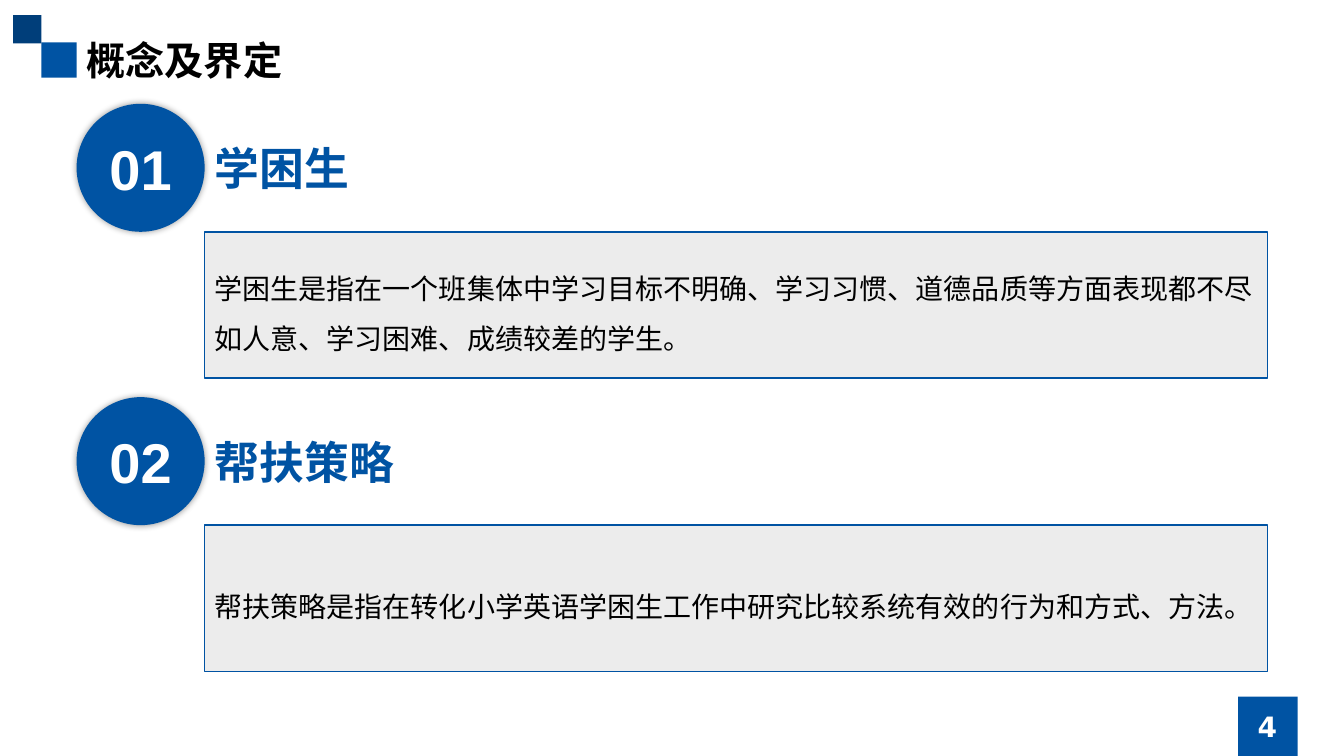
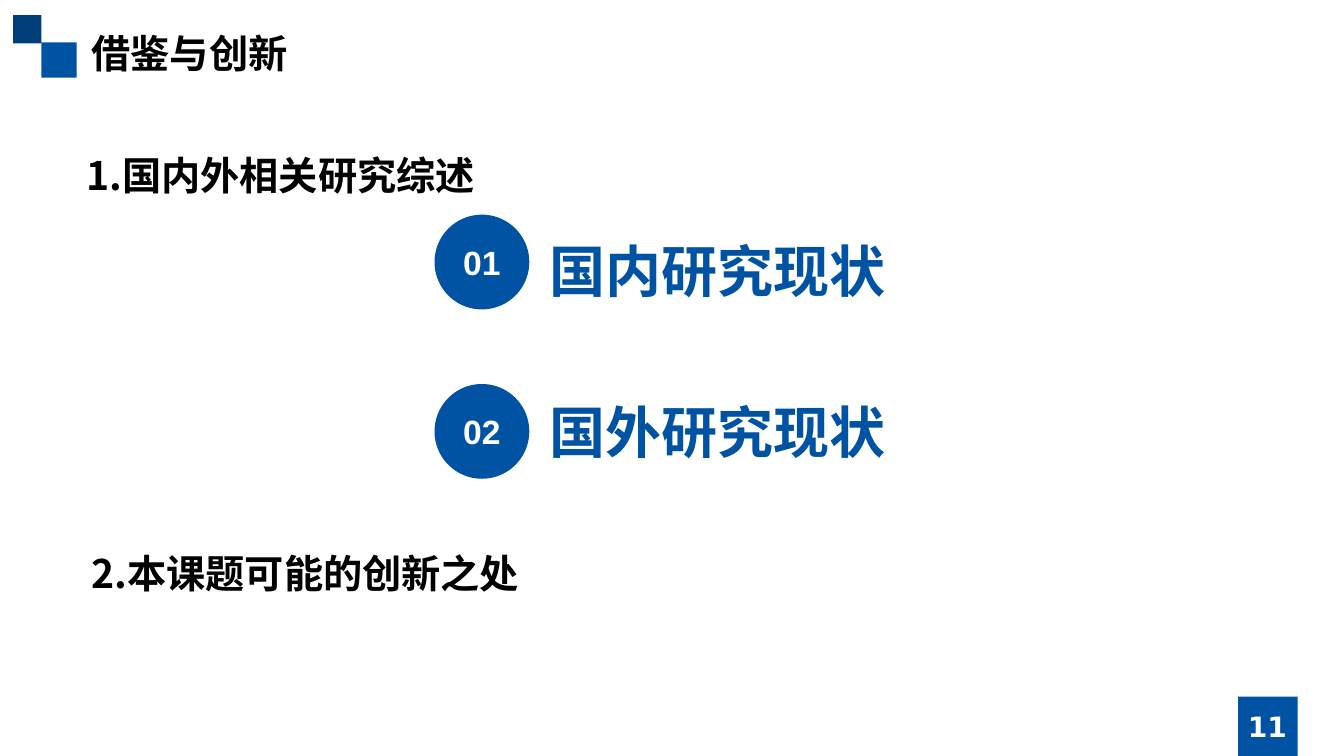
from lxml import etree
from pptx import Presentation
from pptx.dml.color import RGBColor
from pptx.enum.shapes import MSO_SHAPE as Shape
from pptx.enum.text import MSO_ANCHOR as Anchor, MSO_AUTO_SIZE as AutoSize, PP_ALIGN as Align
from pptx.oxml.ns import qn
from pptx.util import Inches, Pt

BLUE = RGBColor(0x00, 0x53, 0xA3)
NAVY = RGBColor(0x00, 0x3E, 0x7A)
PALE = RGBColor(0xEC, 0xEC, 0xEC)
BLACK = RGBColor(0x00, 0x00, 0x00)
WHITE = RGBColor(0xFF, 0xFF, 0xFF)

HEADING_FONT = "Noto Sans CJK SC"
BODY_FONT = "DejaVu Sans"
NUMBER_FONT = "Arial"


class Deck:
    """Shared style and the slide being built."""

    def __init__(self):
        self.prs = Presentation()
        self.prs.slide_width, self.prs.slide_height = Inches(13.33), Inches(7.5)
        self.slide = None

    def new_slide(self, number):
        self.slide = self.prs.slides.add_slide(self.prs.slide_layouts[6])
        # Corner squares and page number
        for left, top, side, color in ((0.41, 0.42, 0.35, BLUE),
                                       (0.13, 0.15, 0.28, NAVY),
                                       (12.28, 6.91, 0.59, BLUE)):
            self.shape(Shape.RECTANGLE, left, top, side, side, color)
        self.text(str(number), 11.81, 7.01, 1.52, 0.4, 20, font=BODY_FONT,
                  color=WHITE, align=Align.CENTER, anchor=Anchor.MIDDLE, grow=False)

    def shape(self, kind, left, top, width, height, fill, line=None, parent=None):
        shapes = (parent or self.slide).shapes
        shape = shapes.add_shape(kind, Inches(left), Inches(top), Inches(width), Inches(height))
        shape.shadow.inherit = False
        shape.fill.solid()
        shape.fill.fore_color.rgb = fill
        if line is None:
            shape.line.fill.background()
        else:
            shape.line.color.rgb = line
            shape.line.width = Pt(1)
        return shape

    def add_words(self, paragraph, words, size, font, color, bold=True, align=Align.LEFT):
        paragraph.alignment = align
        run = paragraph.add_run()
        run.text = words
        run.font.name, run.font.size, run.font.bold = font, Pt(size), bold
        run.font.color.rgb = color
        # Typeface for Chinese characters
        east_asian = etree.SubElement(run._r.get_or_add_rPr(), qn("a:ea"))
        east_asian.set("typeface", HEADING_FONT)

    def text(self, words, left, top, width, height, size, font=HEADING_FONT, color=BLACK,
             bold=True, align=Align.LEFT, anchor=Anchor.TOP, grow=True, spacing=None,
             parent=None):
        shapes = (parent or self.slide).shapes
        box = shapes.add_textbox(Inches(left), Inches(top), Inches(width), Inches(height))
        frame = box.text_frame
        frame.word_wrap = True
        frame.auto_size = AutoSize.SHAPE_TO_FIT_TEXT if grow else AutoSize.NONE
        frame.vertical_anchor = anchor
        paragraph = frame.paragraphs[0]
        if spacing:
            paragraph.line_spacing = spacing
        self.add_words(paragraph, words, size, font, color, bold, align)

    def heading(self, words, left, top, width=11.81):
        self.text(words, left, top, width, 0.57, 28)

    def badge(self, number, left, top, side, size, glow=False):
        circle = self.shape(Shape.OVAL, left, top, side, side, BLUE)
        circle.text_frame.vertical_anchor = Anchor.MIDDLE
        self.add_words(circle.text_frame.paragraphs[0], f"{number:02d}", size, NUMBER_FONT,
                       WHITE, align=Align.CENTER)
        if glow:
            effects = circle._element.spPr.find(qn("a:effectLst"))
            shadow = etree.SubElement(effects, qn("a:outerShdw"), blurRad=str(Pt(5)),
                                      dist="0", dir="0", algn="ctr", rotWithShape="0")
            black = etree.SubElement(shadow, qn("a:srgbClr"), val=str(BLACK))
            etree.SubElement(black, qn("a:alpha"), val="40000")

    def panel(self, words, left, top, lines):
        width, height = 10.54, 1.45
        text_height = 0.1 + 0.5 * lines
        group = self.slide.shapes.add_group_shape()
        self.shape(Shape.RECTANGLE, left, top, width, height, PALE, BLUE, group)
        self.text(words, left, top + (height - text_height) / 2, width, text_height, 20,
                  font=BODY_FONT, bold=False, spacing=1.5, parent=group)

    def save(self):
        self.prs.save("out.pptx")


def concepts_slide(deck):
    deck.new_slide(4)
    deck.heading("概念及界定", 0.76, 0.31, 5.91)
    concepts = (
        ("学困生", "学困生是指在一个班集体中学习目标不明确、学习习惯、道德品质等方面"
                "表现都不尽如人意、学习困难、成绩较差的学生。", 2),
        ("帮扶策略", "帮扶策略是指在转化小学英语学困生工作中研究比较系统有效的行为和"
                 "方式、方法。", 1),
    )
    side, left, pitch = 1.27, 0.76, 2.91
    for index, (term, definition, lines) in enumerate(concepts):
        top = 1.03 + index * pitch
        deck.badge(index + 1, left, top, side, 40, glow=True)
        deck.text(term, left + side, top + 0.32, 5.91, 0.64, 32, color=BLUE)
        deck.panel(definition, left + side, top + side, lines)


def innovation_slide(deck):
    deck.new_slide(11)
    deck.heading("借鉴与创新", 0.81, 0.24)
    # Research review and its two parts
    deck.heading("1.国内外相关研究综述", 0.76, 1.45)
    reviews = (("国内研究现状", 2.13, 2.3), ("国外研究现状", 3.81, 3.89))
    for number, (topic, badge_top, topic_top) in enumerate(reviews, 1):
        deck.badge(number, 4.31, badge_top, 0.94, 24)
        deck.text(topic, 1.7, topic_top, 10.83, 0.77, 40, font=NUMBER_FONT,
                  color=BLUE, align=Align.CENTER)
    # Possible innovations
    deck.heading("2.本课题可能的创新之处", 0.81, 5.4)


def main():
    deck = Deck()
    concepts_slide(deck)
    innovation_slide(deck)
    deck.save()


if __name__ == "__main__":
    main()
